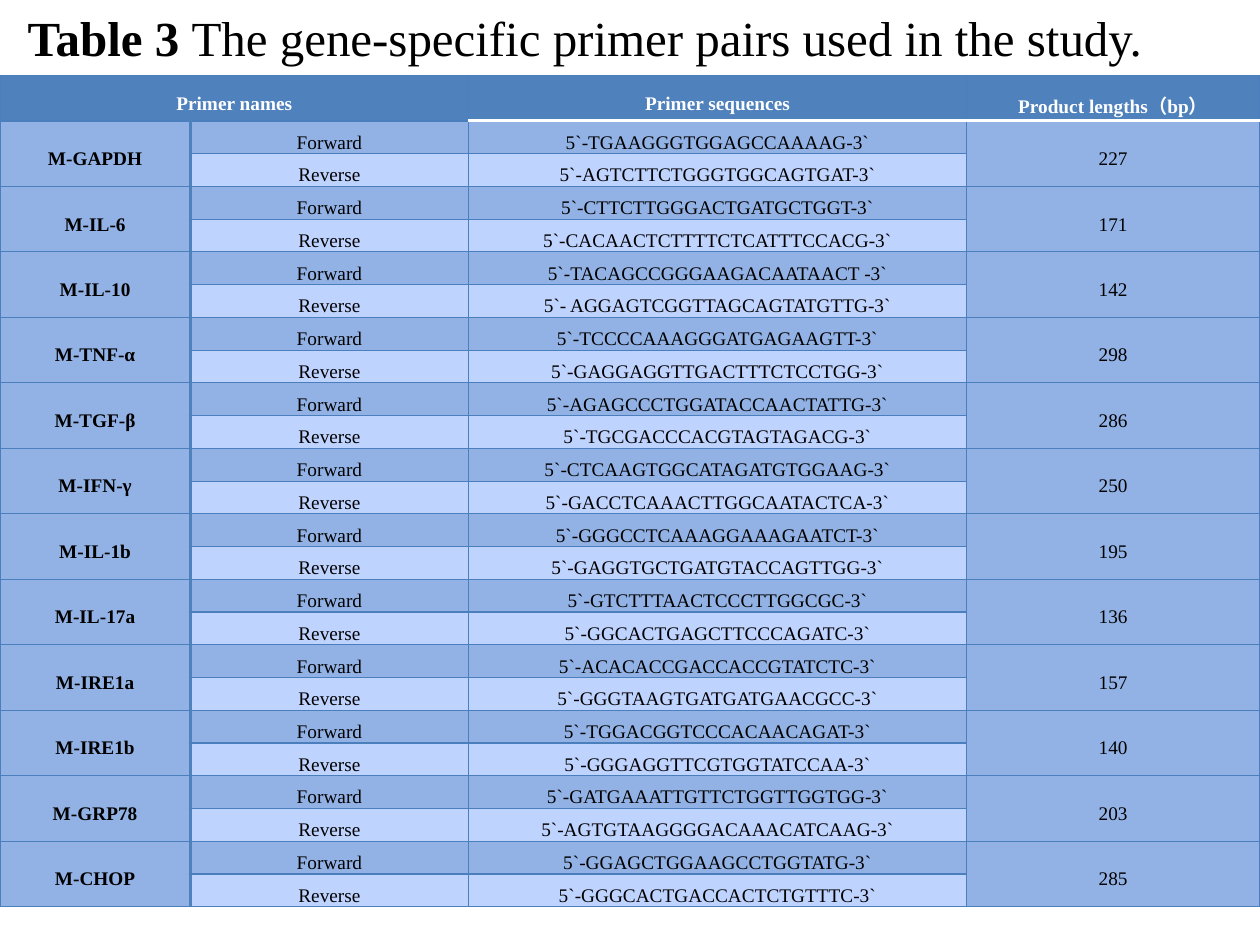
import dataclasses

import lxml.etree
import pptx
import pptx.dml.color
import pptx.enum.text
import pptx.oxml.ns
import pptx.table
import pptx.util
from pptx.util import Inches

FONT = "Times New Roman"
HEADER_BLUE, BAND_BLUE, PALE_BLUE = "4F81BD", "92B2E5", "BFD3FF"
GRID_BLUE, WHITE, BLACK = "4B7EBC", "FFFFFF", "000000"
COLUMN_WIDTHS = [1.51, 2.21, 3.95, 2.33]
HEADER_HEIGHT, ROW_HEIGHT = 0.36, 0.26


@dataclasses.dataclass
class Primer:
    gene: str
    forward: str
    reverse: str
    length: int


PRIMERS = [
    Primer("M-GAPDH", "TGAAGGGTGGAGCCAAAAG", "AGTCTTCTGGGTGGCAGTGAT", 227),
    Primer("M-IL-6", "CTTCTTGGGACTGATGCTGGT", "CACAACTCTTTTCTCATTTCCACG", 171),
    Primer("M-IL-10", "TACAGCCGGGAAGACAATAACT ", " AGGAGTCGGTTAGCAGTATGTTG", 142),
    Primer("M-TNF-α", "TCCCCAAAGGGATGAGAAGTT", "GAGGAGGTTGACTTTCTCCTGG", 298),
    Primer("M-TGF-β", "AGAGCCCTGGATACCAACTATTG", "TGCGACCCACGTAGTAGACG", 286),
    Primer("M-IFN-γ", "CTCAAGTGGCATAGATGTGGAAG", "GACCTCAAACTTGGCAATACTCA", 250),
    Primer("M-IL-1b", "GGGCCTCAAAGGAAAGAATCT", "GAGGTGCTGATGTACCAGTTGG", 195),
    Primer("M-IL-17a", "GTCTTTAACTCCCTTGGCGC", "GGCACTGAGCTTCCCAGATC", 136),
    Primer("M-IRE1a", "ACACACCGACCACCGTATCTC", "GGGTAAGTGATGATGAACGCC", 157),
    Primer("M-IRE1b", "TGGACGGTCCCACAACAGAT", "GGGAGGTTCGTGGTATCCAA", 140),
    Primer("M-GRP78", "GATGAAATTGTTCTGGTTGGTGG", "AGTGTAAGGGGACAAACATCAAG", 203),
    Primer("M-CHOP", "GGAGCTGGAAGCCTGGTATG", "GGGCACTGACCACTCTGTTTC", 285),
]


def rgb(colour: str) -> pptx.dml.color.RGBColor:
    return pptx.dml.color.RGBColor.from_string(colour)


def set_border(cell: pptx.table._Cell, side: str, colour: str, points: float) -> None:
    """Set one border; sides must be added in the order L, R, T, B."""
    line = lxml.etree.SubElement(
        cell._tc.get_or_add_tcPr(), pptx.oxml.ns.qn(f"a:ln{side}"),
        w=str(int(pptx.util.Pt(points))))
    fill = lxml.etree.SubElement(line, pptx.oxml.ns.qn("a:solidFill"))
    lxml.etree.SubElement(fill, pptx.oxml.ns.qn("a:srgbClr"), val=colour)


def style_cell(cell: pptx.table._Cell, row: int, column: int) -> None:
    """Draw the borders and fill that follow from the cell's place."""
    borders = {side: (GRID_BLUE, 0.75) for side in "LRTB"}
    if row > 0 and column < 2:
        borders["R" if column == 0 else "L"] = (HEADER_BLUE, 2)
    if row < 2 and column >= 2:
        borders["B" if row == 0 else "T"] = (WHITE, 2)
    for side, (colour, points) in borders.items():
        set_border(cell, side, colour, points)

    cell.fill.solid()
    if row == 0:
        fill = HEADER_BLUE
    elif row % 2 == 0 and column in (1, 2):
        fill = PALE_BLUE
    else:
        fill = BAND_BLUE
    cell.fill.fore_color.rgb = rgb(fill)


def write_cell(cell: pptx.table._Cell, text: str, colour: str = BLACK,
               bold: bool = False) -> None:
    cell.vertical_anchor = pptx.enum.text.MSO_ANCHOR.MIDDLE
    cell.margin_left = cell.margin_right = Inches(0.05)
    cell.margin_top = cell.margin_bottom = 0
    paragraph = cell.text_frame.paragraphs[0]
    paragraph.text = text
    paragraph.alignment = pptx.enum.text.PP_ALIGN.CENTER
    paragraph.line_spacing = 1.5
    paragraph.font.name = FONT
    paragraph.font.size = pptx.util.Pt(11)
    paragraph.font.bold = bold
    paragraph.font.color.rgb = rgb(colour)


def write_primer(table: pptx.table.Table, row: int, primer: Primer) -> None:
    """Fill the two rows of one gene."""
    for column in (0, 3):
        table.cell(row, column).merge(table.cell(row + 1, column))
    write_cell(table.cell(row, 0), primer.gene, bold=True)
    write_cell(table.cell(row, 3), str(primer.length))
    directions = [("Forward", primer.forward), ("Reverse", primer.reverse)]
    for offset, (direction, sequence) in enumerate(directions):
        write_cell(table.cell(row + offset, 1), direction)
        write_cell(table.cell(row + offset, 2), f"5`-{sequence}-3`")


def main() -> None:
    presentation = pptx.Presentation()
    presentation.slide_width, presentation.slide_height = Inches(10), Inches(7.5)
    slide = presentation.slides.add_slide(presentation.slide_layouts[6])

    # Primer table
    row_count = 1 + 2 * len(PRIMERS)
    height = HEADER_HEIGHT + ROW_HEIGHT * (row_count - 1)
    table = slide.shapes.add_table(
        row_count, len(COLUMN_WIDTHS), 0, Inches(0.6), Inches(10), Inches(height)).table
    table.horz_banding = False
    for column, width in zip(table.columns, COLUMN_WIDTHS):
        column.width = Inches(width)
    for index, row in enumerate(table.rows):
        row.height = Inches(ROW_HEIGHT if index else HEADER_HEIGHT)
        for column, cell in enumerate(row.cells):
            style_cell(cell, index, column)

    # Header row
    table.cell(0, 0).merge(table.cell(0, 1))
    headings = {0: "Primer names", 2: "Primer sequences", 3: "Product lengths（bp）"}
    for column, heading in headings.items():
        write_cell(table.cell(0, column), heading, WHITE, bold=True)

    # Gene rows
    for index, primer in enumerate(PRIMERS):
        write_primer(table, 1 + 2 * index, primer)

    # Caption
    caption = slide.shapes.add_textbox(
        Inches(0.12), Inches(0.01), Inches(9.29), Inches(0.57)).text_frame
    caption.word_wrap = True
    caption.auto_size = pptx.enum.text.MSO_AUTO_SIZE.SHAPE_TO_FIT_TEXT
    paragraph = caption.paragraphs[0]
    paragraph.font.name = FONT
    paragraph.font.size = pptx.util.Pt(28)
    paragraph.font.color.rgb = rgb(BLACK)
    number = paragraph.add_run()
    number.text = "Table 3 "
    number.font.bold = True
    paragraph.add_run().text = "The gene-specific primer pairs used in the study."

    presentation.save("out.pptx")


if __name__ == "__main__":
    main()
